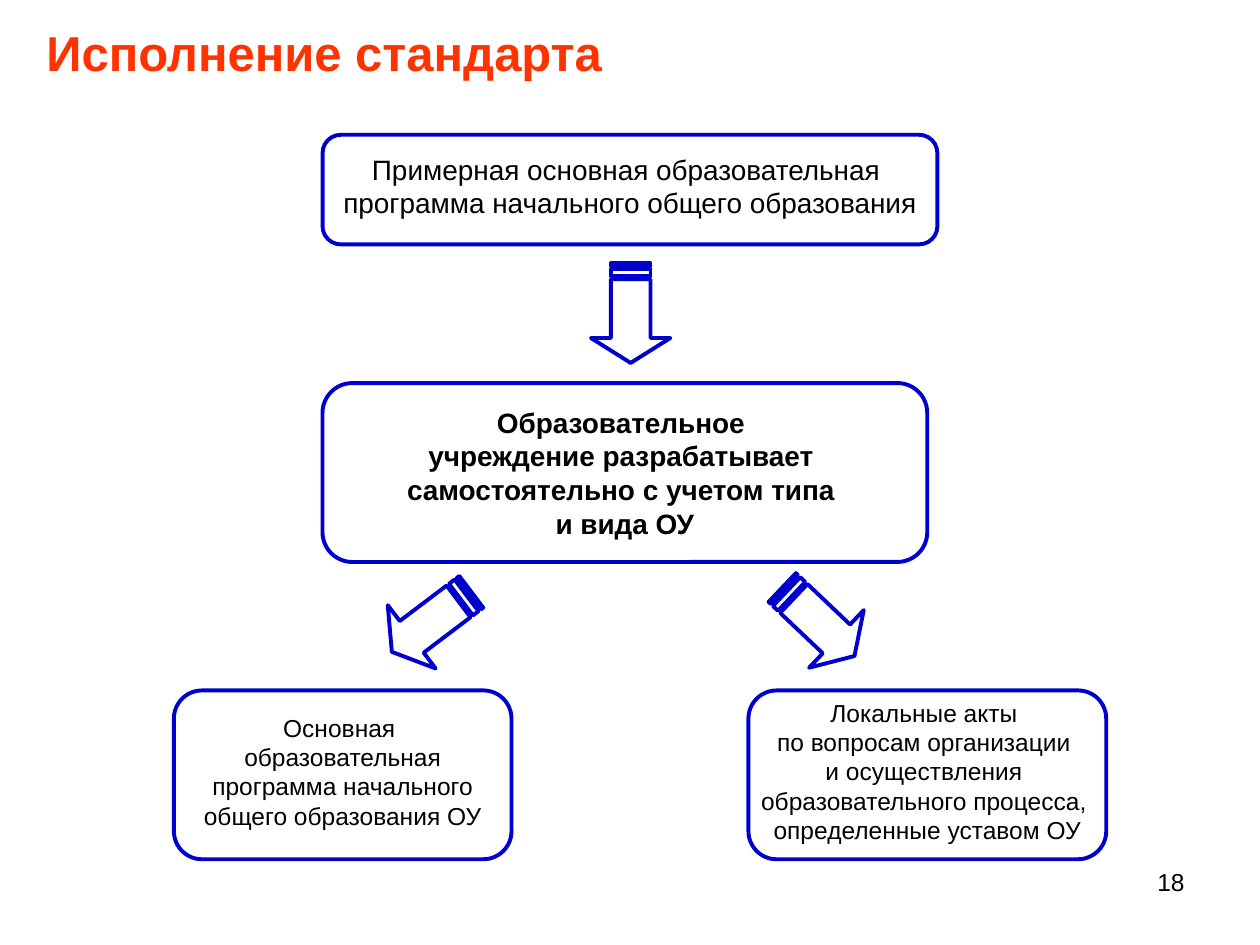
from dataclasses import dataclass

from lxml.etree import SubElement
from pptx import Presentation
from pptx.dml.color import RGBColor
from pptx.enum.shapes import MSO_SHAPE
from pptx.enum.text import MSO_ANCHOR, PP_ALIGN
from pptx.oxml.ns import qn
from pptx.util import Inches, Pt

BLUE = "0000CC"
BLACK = "000000"
TIGHT = {"line_spacing": 0.75}


@dataclass
class Box:
    """A rounded box with centred lines of text."""
    left: float
    top: float
    width: float
    height: float
    size: int
    lines: list[str]
    bold: bool = False


@dataclass
class Arrow:
    """A striped arrow turned by an angle."""
    left: float
    top: float
    turn: float


BOXES = [
    Box(2.56, 1.07, 4.88, 0.87, 16, [
        "Примерная основная образовательная ",
        "программа начального общего образования"]),
    Box(2.56, 3.04, 4.8, 1.42, 16, [
        "Образовательное ", "учреждение разрабатывает ",
        "самостоятельно с учетом типа ", "и вида ОУ"], True),
    Box(5.94, 5.48, 2.84, 1.34, 14, [
        "Локальные акты ", "по вопросам организации ",
        "и осуществления ", "образовательного процесса, ",
        "определенные уставом ОУ"]),
    Box(1.38, 5.48, 2.68, 1.34, 14, [
        "Основная ", "образовательная", "программа начального",
        "общего образования ОУ"]),
]
ARROWS = [Arrow(3.03, 4.62, 142.9), Arrow(4.61, 2.17, 90), Arrow(6.1, 4.62, 43.5)]
WIDE, HIGH = 0.79, 0.63
HEAD = [(0.75, 0), (0.75, 0.25), (0.16, 0.25), (0.16, 0.75),
        (0.75, 0.75), (0.75, 1), (1, 0.5)]
BARS = [(0.06, 0.13), (0, 0.03)]


def color(code: str) -> RGBColor:
    """Turn a hex string into a colour."""
    return RGBColor.from_string(code)


def assign(thing, values: dict) -> None:
    """Set each named value on an object."""
    for name, value in values.items():
        setattr(thing, name, value)


def outline(shape) -> None:
    """Give a shape a plain blue outline."""
    shape.shadow.inherit = False
    shape.fill.background()
    shape.line.color.rgb = color(BLUE)
    shape.line.width = Pt(2.25)


def write(frame, lines: list[str], size: int, code: str, bold: bool, align) -> None:
    """Write one paragraph for each line."""
    for index, line in enumerate(lines):
        para = frame.add_paragraph() if index else frame.paragraphs[0]
        para.alignment = align
        run = para.add_run()
        run.text = line
        assign(run.font, {"name": "Arial", "size": Pt(size), "bold": bold})
        run.font.color.rgb = color(code)


def label(slide, place: tuple, text: str, size: int, code: str,
          bold: bool, align, wrap: bool) -> None:
    """Add a line of free text."""
    frame = slide.shapes.add_textbox(*map(Inches, place)).text_frame
    frame.word_wrap = wrap
    write(frame, [text], size, code, bold, align)


def draw_box(slide, box: Box) -> None:
    """Draw a rounded box and its text."""
    place = map(Inches, (box.left, box.top, box.width, box.height))
    shape = slide.shapes.add_shape(MSO_SHAPE.ROUNDED_RECTANGLE, *place)
    outline(shape)
    frame = shape.text_frame
    assign(frame, {"word_wrap": False, "vertical_anchor": MSO_ANCHOR.MIDDLE})
    write(frame, box.lines, box.size, BLACK, box.bold, PP_ALIGN.CENTER)
    if not box.bold:
        first = frame.paragraphs[0]
        assign(first, TIGHT)
        space = SubElement(first._p.get_or_add_pPr(), qn("a:spcBef"))
        SubElement(space, qn("a:spcPct")).set("val", "20000")


def draw_arrow(slide, arrow: Arrow) -> None:
    """Draw a striped arrow."""
    bars = [[(a, 0.25), (a, 0.75), (b, 0.75), (b, 0.25)] for a, b in BARS]
    paths = [[(Inches(arrow.left + x * WIDE), Inches(arrow.top + y * HIGH))
              for x, y in path] for path in [HEAD, *bars]]
    pen = slide.shapes.build_freeform(*paths[0][0])
    pen.add_line_segments(paths[0][1:])
    for path in paths[1:]:
        pen.move_to(*path[0])
        pen.add_line_segments(path[1:])
    shape = pen.convert_to_shape()
    outline(shape)
    shape.rotation = arrow.turn


def main() -> None:
    """Build and save the slide."""
    deck = Presentation()
    assign(deck, {"slide_width": Inches(10), "slide_height": Inches(7.5)})
    slide = deck.slides.add_slide(deck.slide_layouts[6])
    label(slide, (7.17, 6.83, 2.33, 0.52), "18", 14, BLACK, False, PP_ALIGN.RIGHT, True)
    label(slide, (0.27, 0.13, 4.64, 0.57), "Исполнение стандарта", 28,
          "FF3300", True, PP_ALIGN.LEFT, False)
    for box in BOXES:
        draw_box(slide, box)
    for arrow in ARROWS:
        draw_arrow(slide, arrow)
    deck.save("out.pptx")


if __name__ == "__main__":
    main()
